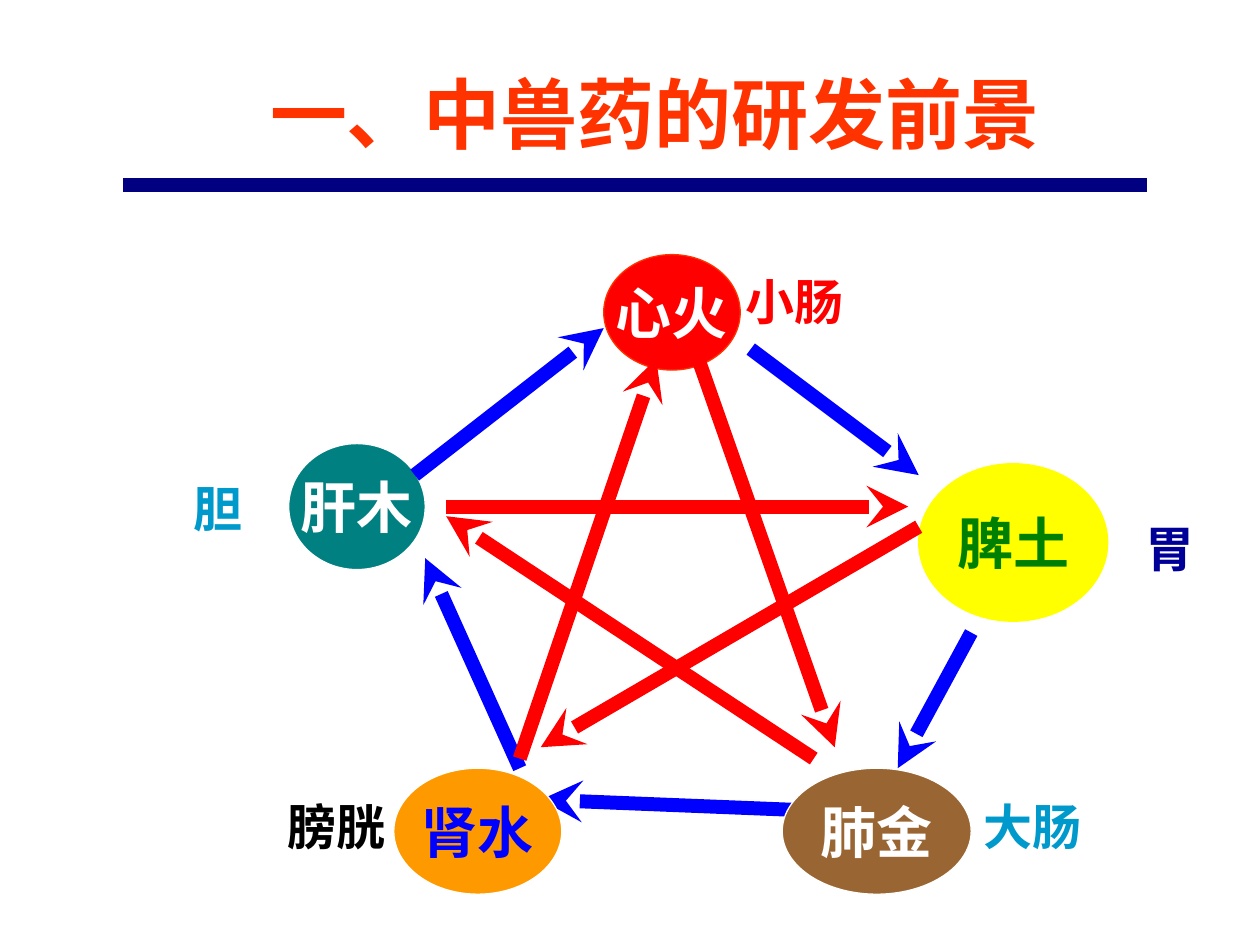
from lxml import etree
from pptx import Presentation
from pptx.dml.color import RGBColor
from pptx.enum.shapes import MSO_CONNECTOR, MSO_SHAPE
from pptx.enum.text import MSO_ANCHOR, PP_ALIGN
from pptx.oxml.ns import qn
from pptx.util import Pt

STRAIGHT = MSO_CONNECTOR.STRAIGHT
OVAL = MSO_SHAPE.OVAL
MIDDLE, BOTTOM = MSO_ANCHOR.MIDDLE, MSO_ANCHOR.BOTTOM
CENTER = PP_ALIGN.CENTER
CJK_FONT = "Noto Sans CJK SC"

COLORS = {
    "white": "FFFFFF", "black": "000000", "blue": "0000FF", "navy": "000080",
    "ink": "000099", "sky": "0099CC", "red": "FF0000", "vermilion": "FF3300",
    "orange": "FF9900", "teal": "008080", "yellow": "FFFF00",
    "green": "008000", "brown": "996633",
}


def write(shape, text, size, font, color):
    """Put one centred bold line of text into the shape."""
    paragraph = shape.text_frame.paragraphs[0]
    paragraph.text = text
    paragraph.alignment = CENTER
    run = paragraph.runs[0]
    run.font.size = Pt(size)
    run.font.bold = True
    run.font.name = font
    run.font.color.rgb = RGBColor.from_string(COLORS[color])
    east_asian = etree.Element(qn("a:ea"), typeface=CJK_FONT)
    run.font._element.find(qn("a:latin")).addnext(east_asian)


def draw_line(start, end, color, width, arrow=True):
    line = slide.shapes.add_connector(STRAIGHT, *map(Pt, start + end))
    line.line.color.rgb = RGBColor.from_string(COLORS[color])
    line.line.width = Pt(width)
    if arrow:
        etree.SubElement(line.line._get_or_add_ln(), qn("a:tailEnd"), type="stealth")
    etree.SubElement(line._element.spPr, qn("a:effectLst"))


prs = Presentation()
prs.slide_width, prs.slide_height = Pt(720), Pt(540)
slide = prs.slides.add_slide(prs.slide_layouts[6])

# Generating arrows that start or end beneath the organs
draw_line((459, 463), (309, 457), "blue", 8)
draw_line((297, 439), (243, 319), "blue", 8)

# Five organs with their elements
organs = [
    ("肾水", 225, 439, 96, 72, "orange", "white", "blue"),
    ("肝木", 165, 253.5, 78, 72, "teal", "white", "white"),
    ("心火", 345, 145.5, 78, 66, "red", "vermilion", "white"),
    ("脾土", 525, 265, 108, 90, "yellow", "yellow", "green"),
    ("肺金", 447, 439, 108, 72, "brown", "white", "white"),
]
for name, left, top, width, height, fill, outline, ink in organs:
    organ = slide.shapes.add_shape(OVAL, Pt(left), Pt(top), Pt(width), Pt(height))
    organ.shadow.inherit = False
    organ.fill.solid()
    organ.fill.fore_color.rgb = RGBColor.from_string(COLORS[fill])
    organ.line.color.rgb = RGBColor.from_string(COLORS[outline])
    organ.line.width = Pt(0.75)
    organ.text_frame.word_wrap = False
    organ.text_frame.vertical_anchor = MIDDLE
    write(organ, name, 32, "Times New Roman", ink)

# Blue arrows generate, red arrows restrain
cycle_arrows = [
    ((525, 301), (309, 427), "red"),
    ((399, 205), (477, 427), "red"),
    ((465, 433.5), (255, 295), "red"),
    ((237, 271.5), (345, 187.5), "blue"),
    ((555, 361.5), (513, 439), "blue"),
    ((429, 199.5), (525, 271.5), "blue"),
    ((297, 433.5), (375, 205), "red"),
    ((255, 289.5), (519, 289.5), "red"),
]
for start, end, color in cycle_arrows:
    draw_line(start, end, color, 8)

# Paired organs beside the ovals
paired_organs = [
    ("胆", 88, 270, "sky"),
    ("小肠", 417, 151.5, "red"),
    ("胃", 632, 292.5, "ink"),
    ("大肠", 553, 451.5, "sky"),
    ("膀胱", 155.5, 451.5, "black"),
]
for name, left, top, color in paired_organs:
    label = slide.shapes.add_textbox(Pt(left), Pt(top), Pt(73.5), Pt(41))
    label.text_frame.word_wrap = True
    write(label, name, 28, "Arial", color)

# Heading
draw_line((70.5, 105.75), (655.5, 105.75), "navy", 7.5, arrow=False)
title = slide.shapes.add_textbox(Pt(60), Pt(37.5), Pt(629), Pt(57))
title.text_frame.word_wrap = True
title.text_frame.vertical_anchor = BOTTOM
write(title, "一、中兽药的研发前景", 44, CJK_FONT, "vermilion")
title.text_frame.paragraphs[0].line_spacing = 0.85

prs.save("out.pptx")
